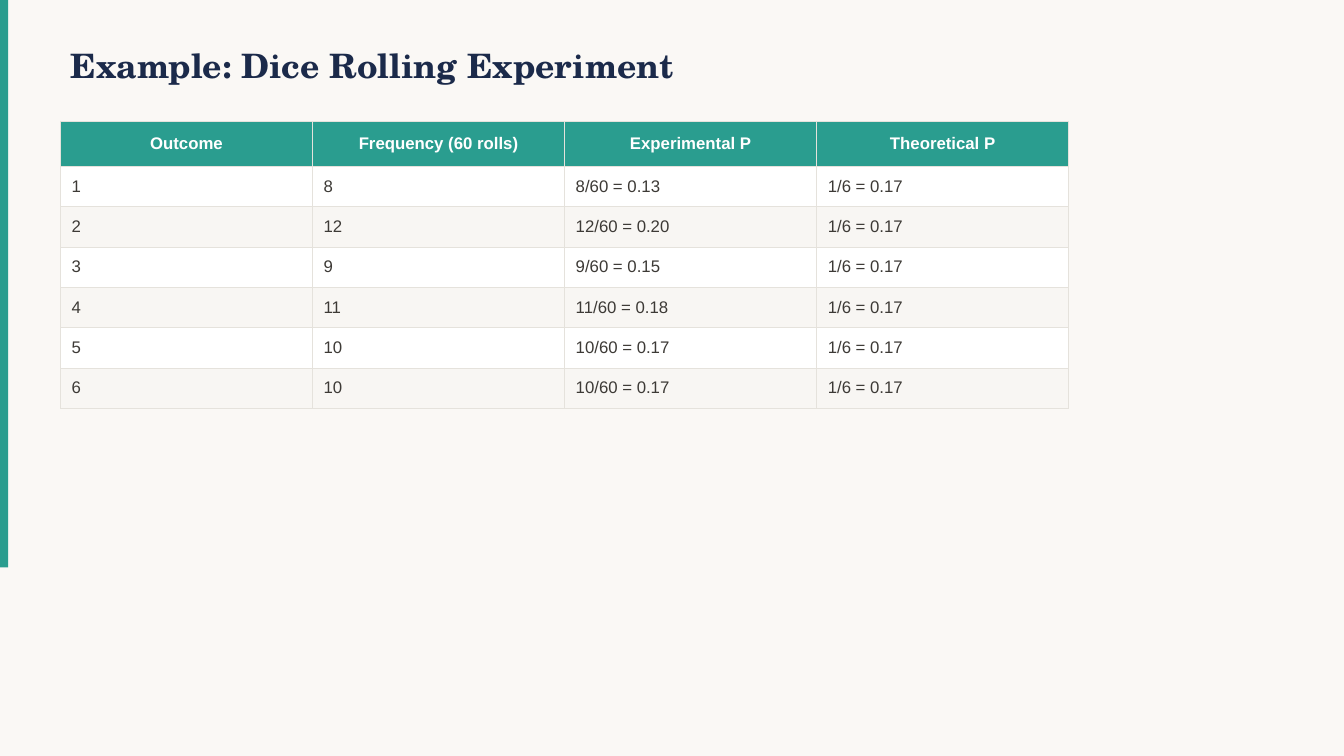
from dataclasses import dataclass

from lxml import etree
from pptx import Presentation
from pptx.dml.color import RGBColor
from pptx.enum.shapes import MSO_SHAPE
from pptx.enum.text import MSO_ANCHOR, MSO_AUTO_SIZE, PP_ALIGN
from pptx.oxml.ns import qn
from pptx.util import Inches, Pt

RECTANGLE = MSO_SHAPE.RECTANGLE
MIDDLE = MSO_ANCHOR.MIDDLE
NO_AUTOFIT = MSO_AUTO_SIZE.NONE
LEFT, CENTER = PP_ALIGN.LEFT, PP_ALIGN.CENTER
TITLE_ONLY = 5


@dataclass(frozen=True)
class Theme:
    background: str = "FAF8F5"
    accent: str = "2A9D8F"
    title: str = "1B2A4A"
    body: str = "3D3A36"
    header_text: str = "FFFFFF"
    odd_row: str = "FFFFFF"
    even_row: str = "F8F6F3"
    border: str = "E5E2DC"
    title_font: str = "TeX Gyre Schola"
    body_font: str = "Arial"
    title_size: float = 24
    body_size: float = 12
    border_width: float = 0.5


THEME = Theme()
HEADERS = ["Outcome", "Frequency (60 rolls)", "Experimental P", "Theoretical P"]
ROLLS = 60
FREQUENCIES = [8, 12, 9, 11, 10, 10]


def paint(fill, color):
    fill.solid()
    fill.fore_color.rgb = RGBColor.from_string(color)


def style_text(paragraph, name, size, color, bold, alignment):
    paragraph.alignment = alignment
    font = paragraph.font
    font.name = name
    font.size = Pt(size)
    font.bold = bold
    font.color.rgb = RGBColor.from_string(color)


def add_borders(cell):
    properties = cell._tc.get_or_add_tcPr()
    for position, side in enumerate(("lnL", "lnR", "lnT", "lnB")):
        line = etree.Element(qn(f"a:{side}"), w=str(Pt(THEME.border_width)))
        fill = etree.SubElement(line, qn("a:solidFill"))
        etree.SubElement(fill, qn("a:srgbClr"), val=THEME.border)
        properties.insert(position, line)


def add_accent_bar(slide, left, top, width, height):
    bar = slide.shapes.add_shape(
        RECTANGLE, Inches(left), Inches(top), Inches(width), Inches(height)
    )
    bar.shadow.inherit = False
    paint(bar.fill, THEME.accent)
    bar.line.fill.background()


def place_title(slide, text, left, top, width, height):
    title = slide.shapes.title
    title.left, title.top = Inches(left), Inches(top)
    title.width, title.height = Inches(width), Inches(height)
    frame = title.text_frame
    frame.text = text
    frame.word_wrap = True
    frame.auto_size = NO_AUTOFIT
    frame.vertical_anchor = MIDDLE
    style_text(frame.paragraphs[0], THEME.title_font, THEME.title_size,
               THEME.title, True, LEFT)


def fill_cell(cell, text, background, color, bold, alignment):
    cell.text = text
    cell.vertical_anchor = MIDDLE
    cell.margin_left = cell.margin_right = Inches(0.11)
    cell.margin_top = cell.margin_bottom = Inches(0.06)
    paint(cell.fill, background)
    add_borders(cell)
    style_text(cell.text_frame.paragraphs[0], THEME.body_font, THEME.body_size,
               color, bold, alignment)


def add_results_table(slide, left, top, width, header_height, row_height):
    results = [
        [str(outcome), str(count), f"{count}/{ROLLS} = {count / ROLLS:.2f}", "1/6 = 0.17"]
        for outcome, count in enumerate(FREQUENCIES, 1)
    ]
    height = header_height + row_height * len(results)
    table = slide.shapes.add_table(
        len(results) + 1, len(HEADERS),
        Inches(left), Inches(top), Inches(width), Inches(height),
    ).table
    for column in table.columns:
        column.width = Inches(width / len(HEADERS))
    for index, values in enumerate([HEADERS] + results):
        table.rows[index].height = Inches(row_height if index else header_height)
        if index == 0:
            look = (THEME.accent, THEME.header_text, True, CENTER)
        else:
            background = THEME.odd_row if index % 2 else THEME.even_row
            look = (background, THEME.body, False, LEFT)
        for column, text in enumerate(values):
            fill_cell(table.cell(index, column), text, *look)


def build_experiment_slide(presentation):
    slide = presentation.slides.add_slide(presentation.slide_layouts[TITLE_ONLY])
    paint(slide.background.fill, THEME.background)
    add_accent_bar(slide, 0, 0, 0.08, 5.63)
    place_title(slide, "Example: Dice Rolling Experiment", 0.6, 0.3, 10, 0.7)
    add_results_table(slide, 0.6, 1.2, 10, 0.45, 0.4)


def main():
    presentation = Presentation()
    presentation.slide_width = Inches(13.33)
    presentation.slide_height = Inches(7.5)
    build_experiment_slide(presentation)
    presentation.save("out.pptx")


if __name__ == "__main__":
    main()
